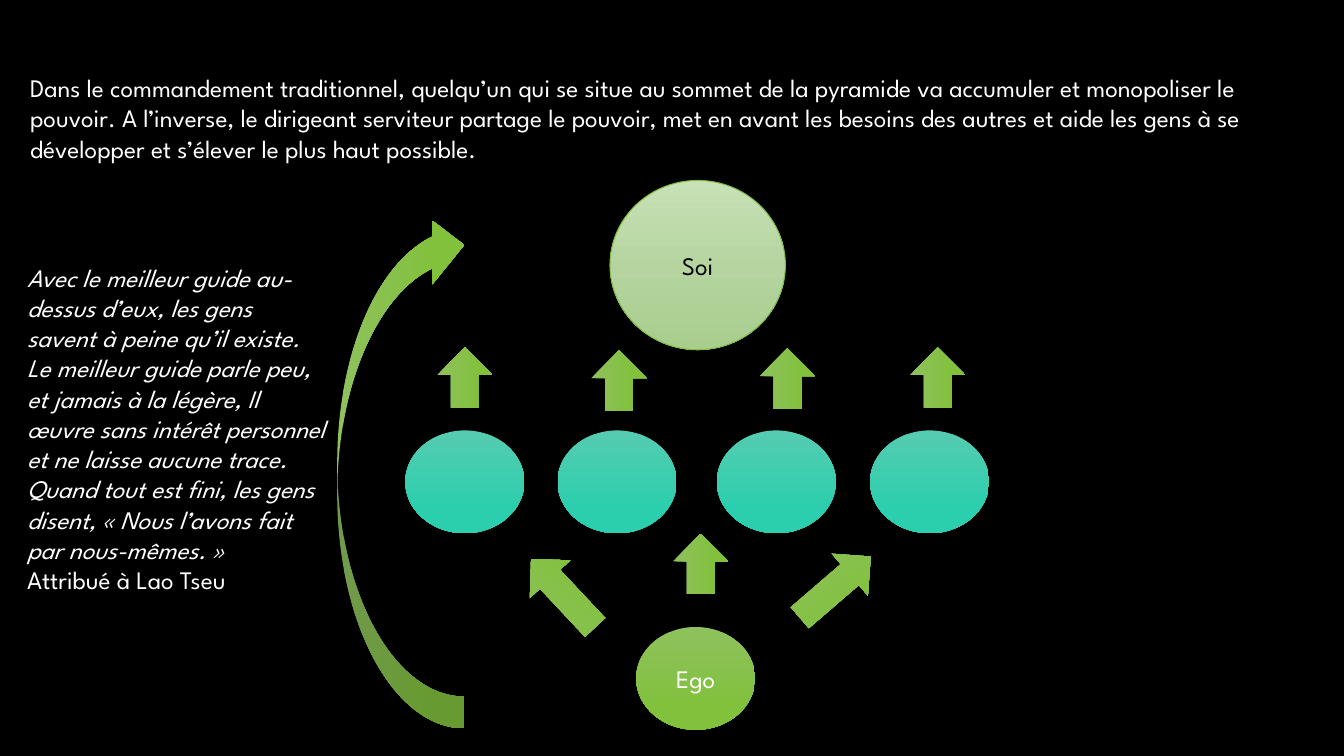
"""Builds the servant leadership slide, from Ego up to Soi."""
from copy import deepcopy
from dataclasses import dataclass

from pptx import Presentation
from pptx.dml.color import RGBColor
from pptx.enum.shapes import MSO_SHAPE
from pptx.enum.text import MSO_ANCHOR, MSO_AUTO_SIZE, PP_ALIGN
from pptx.util import Inches, Pt


@dataclass(frozen=True)
class Theme:
    """Colours, gradients and type of the slide."""
    font: str = "League Spartan"
    size: int = 18
    background: str = "000000"
    light: str = "FFFFFF"
    dark: str = "000000"
    outline: str = "81BB42"
    green: tuple = ((0, "8FC15E"), (0.78, "81C13C"))
    teal: tuple = ((0, "55CCB1"), (0.78, "2BCEAD"))
    pale: tuple = ((0, "C8E1B7"), (0.52, "B5D49F"), (1, "A8CD8D"))


class SlideBuilder:
    """Holds the theme and the current slide."""

    def __init__(self, prs, theme):
        """Adds a blank slide with the theme background."""
        self.theme = theme
        self.s = prs.slides.add_slide(prs.slide_layouts[6])
        fill = self.s.background.fill
        fill.solid()
        fill.fore_color.rgb = RGBColor.from_string(theme.background)

    def paragraph(self, p, text, color, **formats):
        """Writes one styled run into a paragraph."""
        r = p.add_run()
        r.text = text
        formats = {"name": self.theme.font, "size": Pt(self.theme.size), **formats}
        for name, value in formats.items():
            setattr(r.font, name, value)
        r.font.color.rgb = RGBColor.from_string(color)

    def gradient(self, fill, stops):
        """Fills from top to bottom with the given stops."""
        fill.gradient()
        fill.gradient_angle = 270
        gs_list = fill._fill._gradFill.gsLst
        while len(gs_list) < len(stops):
            gs_list.append(deepcopy(gs_list[-1]))
        for stop, (position, color) in zip(fill.gradient_stops, stops):
            stop.position = position
            stop.color.rgb = RGBColor.from_string(color)

    def shape(self, kind, box, stops, rotation=0, outline=None):
        """Adds a gradient shape."""
        sp = self.s.shapes.add_shape(kind, *map(Inches, box))
        sp.rotation = rotation
        sp.shadow.inherit = False
        self.gradient(sp.fill, stops)
        if outline:
            sp.line.color.rgb = RGBColor.from_string(outline)
            sp.line.width = Pt(0.75)
        else:
            sp.line.fill.background()
        return sp

    def circle(self, box, stops, label="", color=None, outline=None):
        """Adds an ellipse with an optional centred label."""
        sp = self.shape(MSO_SHAPE.OVAL, box, stops, outline=outline)
        if label:
            tf = sp.text_frame
            tf.vertical_anchor = MSO_ANCHOR.MIDDLE
            p = tf.paragraphs[0]
            p.alignment = PP_ALIGN.CENTER
            self.paragraph(p, label, color)

    def arrow(self, left, top, width=0.6, rotation=270):
        """Adds a straight block arrow, pointing up by default."""
        self.shape(MSO_SHAPE.RIGHT_ARROW, (left, top, width, 0.55),
                   self.theme.green, rotation)

    def text(self, box, paragraphs):
        """Adds a wrapped text box from (text, italic) pairs."""
        tf = self.s.shapes.add_textbox(*map(Inches, box)).text_frame
        tf.word_wrap = True
        tf.auto_size = MSO_AUTO_SIZE.SHAPE_TO_FIT_TEXT
        for i, (text, italic) in enumerate(paragraphs):
            p = tf.add_paragraph() if i else tf.paragraphs[0]
            self.paragraph(p, text, self.theme.light, italic=italic)


INTRO = (
    "Dans le commandement traditionnel, quelqu’un qui se situe au sommet de la "
    "pyramide va accumuler et monopoliser le pouvoir. A l’inverse, le dirigeant "
    "serviteur partage le pouvoir, met en avant les besoins des autres et aide les "
    "gens à se développer et s’élever le plus haut possible."
)
QUOTE = (
    "Avec le meilleur guide au-dessus d’eux, les gens savent à peine qu’il existe. "
    "Le meilleur guide parle peu, et jamais à la légère, Il œuvre sans intérêt "
    "personnel et ne laisse aucune trace. Quand tout est fini, les gens disent, "
    "« Nous l’avons fait par nous-mêmes. »"
)


def main():
    """Builds and saves the slide."""
    prs = Presentation()
    prs.slide_width, prs.slide_height = Inches(13.33), Inches(7.5)
    theme = Theme()
    slide = SlideBuilder(prs, theme)

    for left in (4.02, 5.53, 7.11, 8.63):
        slide.circle((left, 4.27, 1.18, 1.02), theme.teal)
    slide.circle((6.31, 6.22, 1.18, 1.02), theme.green, "Ego", theme.light)
    slide.shape(MSO_SHAPE.CURVED_DOWN_ARROW, (1.42, 4.04, 5.11, 1.26),
                theme.green, 270)
    slide.circle((6.05, 1.79, 1.74, 1.68), theme.pale, "Soi", theme.dark,
                 theme.outline)

    for left, top in ((4.31, 3.47), (5.84, 3.5), (7.51, 3.48), (9, 3.47),
                      (6.65, 5.32)):
        slide.arrow(left, top)
    slide.arrow(7.82, 5.55, 0.93, 319.2)
    slide.arrow(5.12, 5.61, 0.93, 226.9)

    slide.text((0.17, 2.55, 3.17, 4.04),
               [(QUOTE, True), ("Attribué à Lao Tseu", False)])
    slide.text((0.2, 0.67, 12.95, 1.01), [(INTRO, False)])
    prs.save("out.pptx")


if __name__ == "__main__":
    main()
